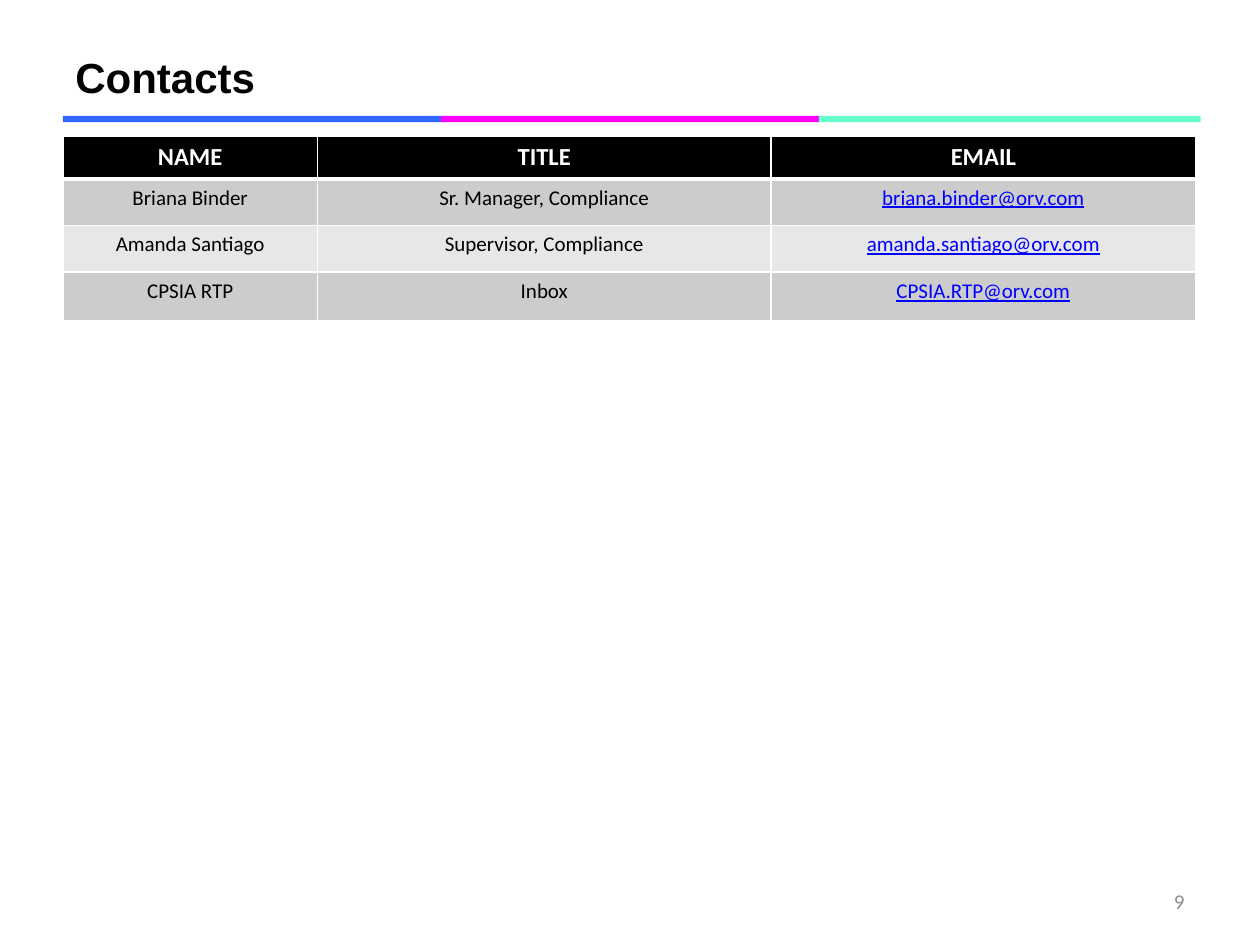
import dataclasses

import lxml.etree
import pptx
import pptx.dml.color
import pptx.enum.shapes
import pptx.enum.text
import pptx.oxml.ns
import pptx.util

Inches = pptx.util.Inches
Align = pptx.enum.text.PP_ALIGN
Anchor = pptx.enum.text.MSO_ANCHOR


@dataclasses.dataclass(frozen=True)
class Theme:
    heading_font: str = "Arial"
    body_font: str = "Calibri"
    title_size: int = 24
    header_size: int = 14
    body_size: int = 12
    black: str = "000000"
    white: str = "FFFFFF"
    link: str = "0000FF"
    page_number: str = "8C8C8C"
    bands: tuple = ("CCCCCC", "E7E7E7")
    stripes: tuple = ("3366FF", "FF00FF", "66FFCC")
    thin_border: int = 1
    header_border: int = 3


def rgb(color):
    return pptx.dml.color.RGBColor.from_string(color)


def write_text(frame, text, *, font, size, color, align=Align.LEFT, bold=False, underline=False):
    paragraph = frame.paragraphs[0]
    paragraph.alignment = align
    run = paragraph.add_run()
    run.text = text
    run.font.name = font
    run.font.size = pptx.util.Pt(size)
    run.font.color.rgb = rgb(color)
    run.font.bold = bold
    run.font.underline = underline


class SlideBuilder:
    def __init__(self, slide, theme):
        self.slide = slide
        self.theme = theme

    def text(self, text, left, top, width, height, **text_format):
        box = self.slide.shapes.add_textbox(Inches(left), Inches(top), Inches(width), Inches(height))
        box.text_frame.word_wrap = True
        box.text_frame.vertical_anchor = Anchor.MIDDLE
        write_text(box.text_frame, text, **text_format)

    def stripe(self, left, top, width, height, color):
        stripe = self.slide.shapes.add_shape(
            pptx.enum.shapes.MSO_SHAPE.RECTANGLE,
            Inches(left), Inches(top), Inches(width), Inches(height),
        )
        stripe.shadow.inherit = False
        stripe.fill.solid()
        stripe.fill.fore_color.rgb = rgb(color)
        stripe.line.fill.background()

    def borders(self, cell, **widths):
        properties = cell._tc.get_or_add_tcPr()
        for side in "LRTB":
            width = pptx.util.Pt(widths.get(side, self.theme.thin_border))
            line = lxml.etree.SubElement(properties, pptx.oxml.ns.qn(f"a:ln{side}"), w=str(width))
            fill = lxml.etree.SubElement(line, pptx.oxml.ns.qn("a:solidFill"))
            lxml.etree.SubElement(fill, pptx.oxml.ns.qn("a:srgbClr"), val=self.theme.white)

    def cell(self, cell, text, fill, border_widths, **text_format):
        self.borders(cell, **border_widths)
        cell.fill.solid()
        cell.fill.fore_color.rgb = rgb(fill)
        write_text(cell.text_frame, text, font=self.theme.body_font, align=Align.CENTER, **text_format)

    def table(self, header, contacts, left, top, widths, heights):
        theme = self.theme
        table = self.slide.shapes.add_table(
            len(heights), len(widths),
            Inches(left), Inches(top), Inches(sum(widths)), Inches(sum(heights)),
        ).table
        for column, width in zip(table.columns, widths):
            column.width = Inches(width)
        for row, height in zip(table.rows, heights):
            row.height = Inches(height)
        for column, label in enumerate(header):
            self.cell(table.cell(0, column), label, theme.black, {"B": theme.header_border},
                      size=theme.header_size, color=theme.white, bold=True)
        for row, contact in enumerate(contacts, start=1):
            band = theme.bands[(row - 1) % 2]
            border_widths = {"T": theme.header_border} if row == 1 else {}
            for column, value in enumerate(contact):
                is_email = header[column] == "EMAIL"
                self.cell(table.cell(row, column), value, band, border_widths,
                          size=theme.body_size,
                          color=theme.link if is_email else theme.black,
                          underline=is_email)


def main():
    presentation = pptx.Presentation()
    presentation.slide_width = Inches(10)
    presentation.slide_height = Inches(7.5)
    theme = Theme()
    builder = SlideBuilder(presentation.slides.add_slide(presentation.slide_layouts[6]), theme)

    margin = 0.5
    for position, (color, width) in enumerate(zip(theme.stripes, (3, 3, 3.03))):
        builder.stripe(margin + 3 * position, 0.92, width, 0.05, color)
    builder.text("Contacts", margin, 0.3, 9, 0.62, font=theme.heading_font,
                 size=theme.title_size, color=theme.black, bold=True)

    header = ("NAME", "TITLE", "EMAIL")
    contacts = (
        ("Briana Binder", "Sr. Manager, Compliance", "briana.binder@orv.com"),
        ("Amanda Santiago", "Supervisor, Compliance", "amanda.santiago@orv.com"),
        ("CPSIA RTP", "Inbox", "CPSIA.RTP@orv.com"),
    )
    builder.table(header, contacts, margin, 1.08,
                  widths=(2.02, 3.6, 3.37), heights=(0.34, 0.37, 0.37, 0.39))
    builder.text("9", 7.17, 6.95, 2.33, 0.4, font=theme.body_font,
                 size=theme.body_size, color=theme.page_number, align=Align.RIGHT)
    presentation.save("out.pptx")


if __name__ == "__main__":
    main()
